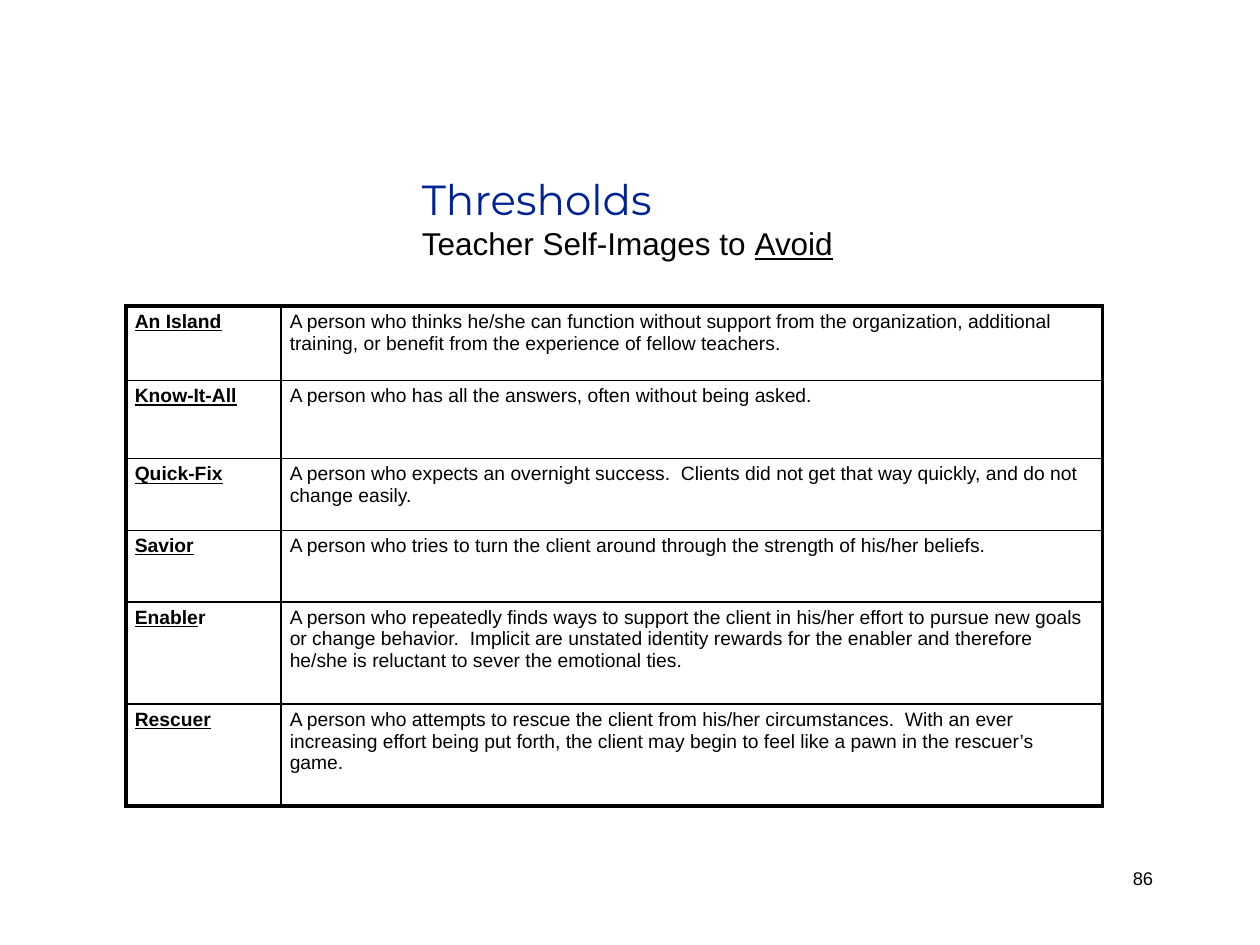
from lxml import etree
from pptx import Presentation
from pptx.dml.color import RGBColor
from pptx.enum.text import MSO_ANCHOR, PP_ALIGN
from pptx.oxml.ns import qn
from pptx.util import Inches, Pt

TOP = MSO_ANCHOR.TOP
LEFT, RIGHT = PP_ALIGN.LEFT, PP_ALIGN.RIGHT
BLACK = RGBColor(0x00, 0x00, 0x00)
NAVY = RGBColor(0x00, 0x23, 0x94)
THICK, THIN = 2.25, 1

TITLE = "Thresholds"
SUBTITLE = ("Teacher Self-Images to ", "Avoid")
PAGE = "86"
COLS = [1.23, 6.52]
ROWS = [
    (0.59, "An Island", "", "A person who thinks he/she can function without support from the organization, "
     "additional training, or benefit from the experience of fellow teachers."),
    (0.62, "Know-It-All", "", "A person who has all the answers, often without being asked."),
    (0.57, "Quick-Fix", "", "A person who expects an overnight success.  Clients did not get that way "
     "quickly, and do not change easily."),
    (0.57, "Savior", "", "A person who tries to turn the client around through the strength of "
     "his/her beliefs."),
    (0.81, "Enable", "r", "A person who repeatedly finds ways to support the client in his/her effort to "
     "pursue new goals or change behavior.  Implicit are unstated identity rewards for the enabler and "
     "therefore he/she is reluctant to sever the emotional ties."),
    (0.81, "Rescuer", "", "A person who attempts to rescue the client from his/her circumstances.  With an "
     "ever increasing effort being put forth, the client may begin to feel like a pawn in the rescuer’s game."),
]


def add_run(p, text, size=11, font="Arial", color=BLACK, bold=False, underline=False):
    r = p.add_run()
    r.text = text
    f = r.font
    f.size, f.name, f.bold, f.underline = Pt(size), font, bold, underline
    f.color.rgb = color


def add_box(s, left, top, width, height, inset_top=0.05, align=LEFT):
    tf = s.shapes.add_textbox(*map(Inches, (left, top, width, height))).text_frame
    tf.word_wrap = True
    tf.vertical_anchor = TOP
    tf.margin_top = Inches(inset_top)
    p = tf.paragraphs[0]
    p.alignment = align
    return p


def set_border(cell, side, width):
    ln = etree.SubElement(cell._tc.get_or_add_tcPr(), qn(f"a:ln{side}"), w=str(Pt(width)))
    fill = etree.SubElement(ln, qn("a:solidFill"))
    etree.SubElement(fill, qn("a:srgbClr"), val=str(BLACK))


def add_images_table(s):
    heights = [row[0] for row in ROWS]
    frame = s.shapes.add_table(len(ROWS), len(COLS), Inches(1), Inches(2.43),
                               Inches(sum(COLS)), Inches(sum(heights)))
    table = frame.table
    table.first_row = table.horz_banding = False
    for col, width in zip(table.columns, COLS):
        col.width = Inches(width)
    for row, height in zip(table.rows, heights):
        row.height = Inches(height)
    for i, (_, name, rest, meaning) in enumerate(ROWS):
        for j in range(len(COLS)):
            cell = table.cell(i, j)
            cell.margin_left = cell.margin_right = Inches(0.07)
            cell.margin_top = cell.margin_bottom = Inches(0.04)
            outer = {"L": j == 0, "R": j == len(COLS) - 1, "T": i == 0, "B": i == len(ROWS) - 1}
            for side, is_outer in outer.items():
                set_border(cell, side, THICK if is_outer else THIN)
            cell.fill.background()
            p = cell.text_frame.paragraphs[0]
            if j == 0:
                add_run(p, name, bold=True, underline=True)
                if rest:
                    add_run(p, rest, bold=True)
            else:
                add_run(p, meaning)


def main():
    prs = Presentation()
    prs.slide_width, prs.slide_height = Inches(10), Inches(7.5)
    s = prs.slides.add_slide(prs.slide_layouts[6])

    p = add_box(s, 3.25, 1.19, 3.88, 0.62, inset_top=0.19)
    add_run(p, TITLE, size=24, font="Montserrat", color=NAVY)
    p.add_line_break()
    add_run(p, SUBTITLE[0], size=18)
    add_run(p, SUBTITLE[1], size=18, underline=True)

    add_images_table(s)

    add_run(add_box(s, 7.17, 6.83, 2.08, 0.5, align=RIGHT), PAGE, size=10.5)
    prs.save("out.pptx")


if __name__ == "__main__":
    main()
